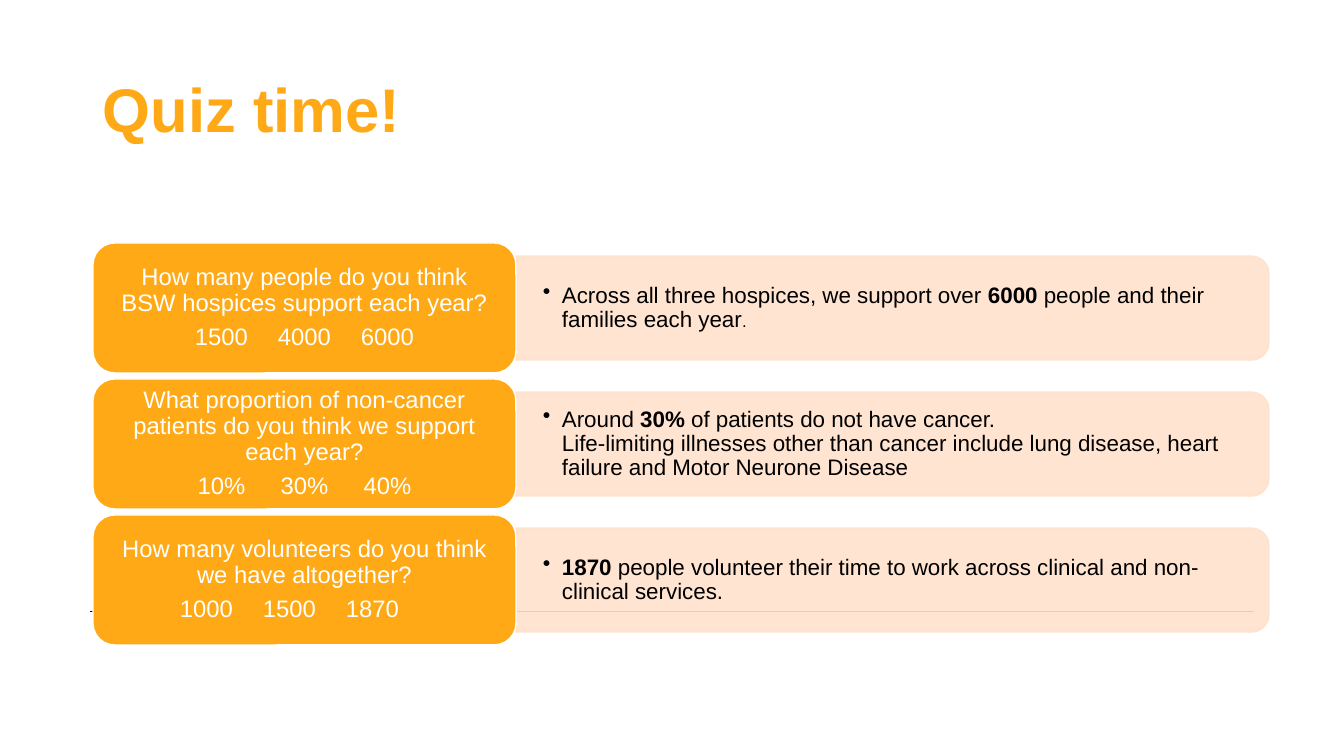
from dataclasses import dataclass
from lxml import etree
from pptx import Presentation, util as u
from pptx.dml.color import RGBColor
from pptx.enum import shapes, text
from pptx.oxml.ns import qn


@dataclass(frozen=True)
class Theme:
    font: str = "Arial"
    gold: str = "FEA915"
    peach: str = "FFE2CC"
    white: str = "FFFFFF"
    black: str = "000000"
    title: int = 44
    card: int = 17
    answer: int = 16
    small: int = 12


THEME = Theme()
ROWS = [
    ("How many people do you think BSW hospices support each year?",
     "1500\t4000\t6000",
     [("Across all three hospices, we support over ", ""), ("6000", "bold"),
      (" people and their families each year", ""), (".", "small")]),
    ("What proportion of non-cancer patients do you think we support each year?",
     "10%\t30%\t40%",
     [("Around ", ""), ("30%", "bold"),
      (" of patients do not have cancer.", ""), ("", "break"),
      ("Life-limiting illnesses other than cancer include lung disease, "
       "heart failure and Motor Neurone Disease", "")]),
    ("How many volunteers do you think we have altogether?",
     "1000\t1500\t1870\t",
     [("1870", "bold"),
      (" people volunteer their time to work across clinical and "
       "non-clinical services.", "")]),
]


def px(n):
    return u.Emu(round(n * 914400 / 100.8))


def box(*lengths):
    return [px(n) for n in lengths]


def rgb(color):
    return RGBColor.from_string(color)


def put(obj, **values):
    for name, value in values.items():
        setattr(obj, name, value)


def frame(shape, side, top):
    put(shape.text_frame, word_wrap=True, auto_size=text.MSO_AUTO_SIZE.NONE,
        vertical_anchor=text.MSO_ANCHOR.MIDDLE,
        margin_left=px(side), margin_right=px(side),
        margin_top=px(top), margin_bottom=px(top))
    return shape.text_frame


def style(font, size, color, bold=False):
    put(font, name=THEME.font, size=u.Pt(size), bold=bold)
    font.color.rgb = rgb(color)


def paint(shape, fill, line):
    shape.shadow.inherit = False
    shape.fill.solid()
    shape.fill.fore_color.rgb = rgb(fill)
    shape.line.color.rgb = rgb(line)
    shape.line.width = u.Pt(1)


# Thin rule behind the rows
def rule(slide, x, y, w):
    line = slide.shapes.add_connector(
        shapes.MSO_CONNECTOR.STRAIGHT, *box(x, y, x + w, y))
    line.line.color.rgb = rgb(THEME.black)
    line.line.width = u.Pt(0.5)
    etree.SubElement(line._element.spPr, qn("a:effectLst"))


# Slide heading
def head(slide, x, y, w, h):
    title = slide.shapes.title
    put(title, left=px(x), top=px(y), width=px(w), height=px(h))
    para = frame(title, 10, 5).paragraphs[0]
    para.text = "Quiz time!"
    put(para, alignment=text.PP_ALIGN.LEFT, line_spacing=0.9)
    style(para.runs[0].font, THEME.title, THEME.gold, True)


# Pale panel: a shape turned a quarter, with its answer on top
def panel(slide, x, y, w, h, answer):
    back = slide.shapes.add_shape(
        shapes.MSO_SHAPE.ROUND_2_SAME_RECTANGLE,
        *box(x + (w - h) / 2, y + (h - w) / 2, h, w))
    back.rotation = 90
    paint(back, THEME.peach, THEME.peach)
    for color in back._element.spPr.iter(qn("a:srgbClr")):
        etree.SubElement(color, qn("a:alpha"), val="90000")

    label = slide.shapes.add_textbox(*box(x, y + 5, w - 5, h - 10))
    para = frame(label, 27, 14).paragraphs[0]
    props = para._p.get_or_add_pPr()
    props.set("marL", str(px(19)))
    props.set("indent", str(-px(19)))
    etree.SubElement(props, qn("a:buChar"), char="•")
    put(para, level=1, line_spacing=0.9, space_after=u.Pt(2.4))
    for words, kind in answer:
        if kind == "break":
            para.add_line_break()
            continue
        run = para.add_run()
        run.text = words
        size = THEME.small if kind == "small" else THEME.answer
        style(run.font, size, THEME.black, kind == "bold")


# Gold card: the question and its choices
def card(slide, x, y, w, h, ask, picks):
    shape = slide.shapes.add_shape(
        shapes.MSO_SHAPE.ROUNDED_RECTANGLE, *box(x, y, w, h))
    paint(shape, THEME.gold, THEME.white)
    body = frame(shape, 13, 10)
    for para, words in ((body.paragraphs[0], ask),
                        (body.add_paragraph(), picks)):
        if "\t" in words:
            tabs = etree.SubElement(para._p.get_or_add_pPr(), qn("a:tabLst"))
            for i in range(1, 4):
                etree.SubElement(tabs, qn("a:tab"),
                                 pos=str(px(83 * i)), algn="l")
        put(para, alignment=text.PP_ALIGN.CENTER, line_spacing=0.9,
            space_after=u.Pt(6))
        run = para.add_run()
        run.text = words
        style(run.font, THEME.card, THEME.white)


# Rows at an even pitch
def quiz(slide, x, y, w):
    wide, tall, gap, inset = 423, 130, 6, 13
    for i, (ask, picks, answer) in enumerate(ROWS):
        top = y + i * (tall + gap)
        panel(slide, x + wide, top + inset, w - wide, tall - 2 * inset, answer)
        card(slide, x, top, wide, tall, ask, picks)


def main():
    deck = Presentation()
    put(deck, slide_width=px(1344), slide_height=px(756))
    slide = deck.slides.add_slide(deck.slide_layouts[5])
    rule(slide, 90, 611, 1164)
    head(slide, 93, 40, 1159, 146)
    quiz(slide, 93, 243, 1176)
    deck.save("out.pptx")


if __name__ == "__main__":
    main()
